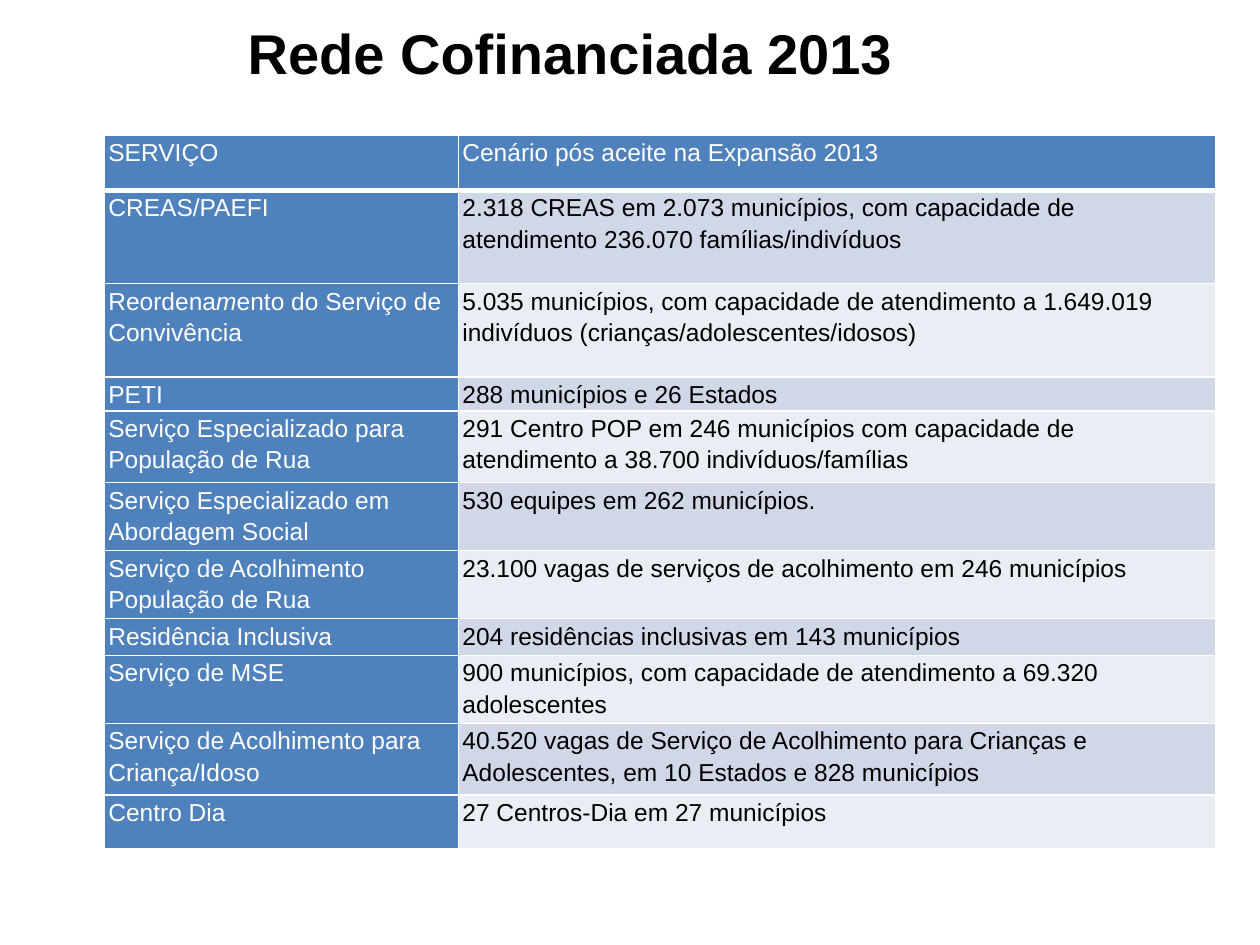
from dataclasses import dataclass
from typing import NamedTuple

from lxml.etree import SubElement
from pptx import Presentation
from pptx.dml.color import RGBColor as Rgb
from pptx.enum.text import MSO_AUTO_SIZE as AutoSize, PP_ALIGN as Align
from pptx.oxml.ns import qn
from pptx.util import Inches, Pt

SLIDE_WIDTH, SLIDE_HEIGHT = Inches(10), Inches(7.5)


@dataclass(frozen=True)
class Theme:
    font: str = "Arial"
    title_size: int = 32
    body_size: int = 14
    dark: str = "000000"
    light: str = "FFFFFF"
    accent: str = "4F81BD"
    bands: tuple[str, str] = ("D0D8E8", "E9EDF4")
    rule: int = 1
    header_rule: int = 3


class Service(NamedTuple):
    name: str
    coverage: str
    height: float


THEME = Theme()
COLUMN_SHARES = (0.281, 0.601)
ITALIC_MARK = "*"
SERVICES = (
    Service("SERVIÇO", "Cenário pós aceite na Expansão 2013", 0.44),
    Service("CREAS/PAEFI", "2.318 CREAS em 2.073 municípios, com capacidade de "
            "atendimento 236.070 famílias/indivíduos", 0.74),
    Service("Reordena*m*ento do Serviço de Convivência",
            "5.035 municípios, com capacidade de atendimento a 1.649.019 "
            "indivíduos (crianças/adolescentes/idosos)", 0.74),
    Service("PETI", "288 municípios e 26 Estados", 0.27),
    Service("Serviço Especializado para População de Rua",
            "291 Centro POP em 246 municípios com capacidade de "
            "atendimento a 38.700 indivíduos/famílias", 0.57),
    Service("Serviço Especializado em Abordagem Social",
            "530 equipes em 262 municípios.", 0.54),
    Service("Serviço de Acolhimento População de Rua",
            "23.100 vagas de serviços de acolhimento em 246 municípios", 0.54),
    Service("Residência Inclusiva",
            "204 residências inclusivas em 143 municípios", 0.29),
    Service("Serviço de MSE", "900 municípios, com capacidade de atendimento "
            "a 69.320 adolescentes", 0.54),
    Service("Serviço de Acolhimento para Criança/Idoso",
            "40.520 vagas de Serviço de Acolhimento para Crianças e "
            "Adolescentes, em 10 Estados e 828 municípios", 0.57),
    Service("Centro Dia", "27 Centros-Dia em 27 municípios", 0.43),
)


def across(share: float) -> int:
    return int(SLIDE_WIDTH * share)


def down(share: float) -> int:
    return int(SLIDE_HEIGHT * share)


def style_run(run, size: int, color: str, bold: bool = False, italic: bool = False) -> None:
    run.font.name = THEME.font
    run.font.size = Pt(size)
    run.font.color.rgb = Rgb.from_string(color)
    run.font.bold = bold
    run.font.italic = italic


def draw_borders(cell, bottom_width: int) -> None:
    properties = cell._tc.get_or_add_tcPr()
    for side in "LRTB":
        width = bottom_width if side == "B" else THEME.rule
        line = SubElement(properties, qn(f"a:ln{side}"), w=str(Pt(width)))
        SubElement(SubElement(line, qn("a:solidFill")), qn("a:srgbClr"), val=THEME.light)


def fill_cell(cell, wording: str, fill: str, color: str, bottom_width: int) -> None:
    draw_borders(cell, bottom_width)
    cell.fill.solid()
    cell.fill.fore_color.rgb = Rgb.from_string(fill)
    cell.margin_left = cell.margin_right = Inches(0.03)
    cell.margin_top = cell.margin_bottom = 0
    paragraph = cell.text_frame.paragraphs[0]
    paragraph.line_spacing = 1.15
    paragraph.space_after = Pt(10)
    for index, part in enumerate(wording.split(ITALIC_MARK)):
        run = paragraph.add_run()
        run.text = part
        style_run(run, THEME.body_size, color, italic=index % 2 == 1)


def draw_services(slide) -> None:
    height = sum(Inches(service.height) for service in SERVICES)
    table = slide.shapes.add_table(
        len(SERVICES), len(COLUMN_SHARES), across(0.083), down(0.143),
        across(sum(COLUMN_SHARES)), height).table
    for column, share in zip(table.columns, COLUMN_SHARES):
        column.width = across(share)
    for index, service in enumerate(SERVICES):
        table.rows[index].height = Inches(service.height)
        header = index == 0
        bottom_width = THEME.header_rule if header else THEME.rule
        coverage_fill = THEME.accent if header else THEME.bands[(index - 1) % 2]
        coverage_color = THEME.light if header else THEME.dark
        fill_cell(table.cell(index, 0), service.name, THEME.accent, THEME.light, bottom_width)
        fill_cell(table.cell(index, 1), service.coverage, coverage_fill,
                  coverage_color, bottom_width)


def draw_title(slide, wording: str) -> None:
    title = slide.shapes.add_textbox(across(0.185), down(0.013), across(0.535), down(0.085))
    frame = title.text_frame
    frame.word_wrap = True
    frame.auto_size = AutoSize.SHAPE_TO_FIT_TEXT
    frame.text = wording
    frame.paragraphs[0].alignment = Align.CENTER
    style_run(frame.paragraphs[0].runs[0], THEME.title_size, THEME.dark, bold=True)


def main() -> None:
    deck = Presentation()
    deck.slide_width, deck.slide_height = SLIDE_WIDTH, SLIDE_HEIGHT
    slide = deck.slides.add_slide(deck.slide_layouts[6])
    draw_services(slide)
    draw_title(slide, "Rede Cofinanciada 2013 ")
    deck.save("out.pptx")


if __name__ == "__main__":
    main()
